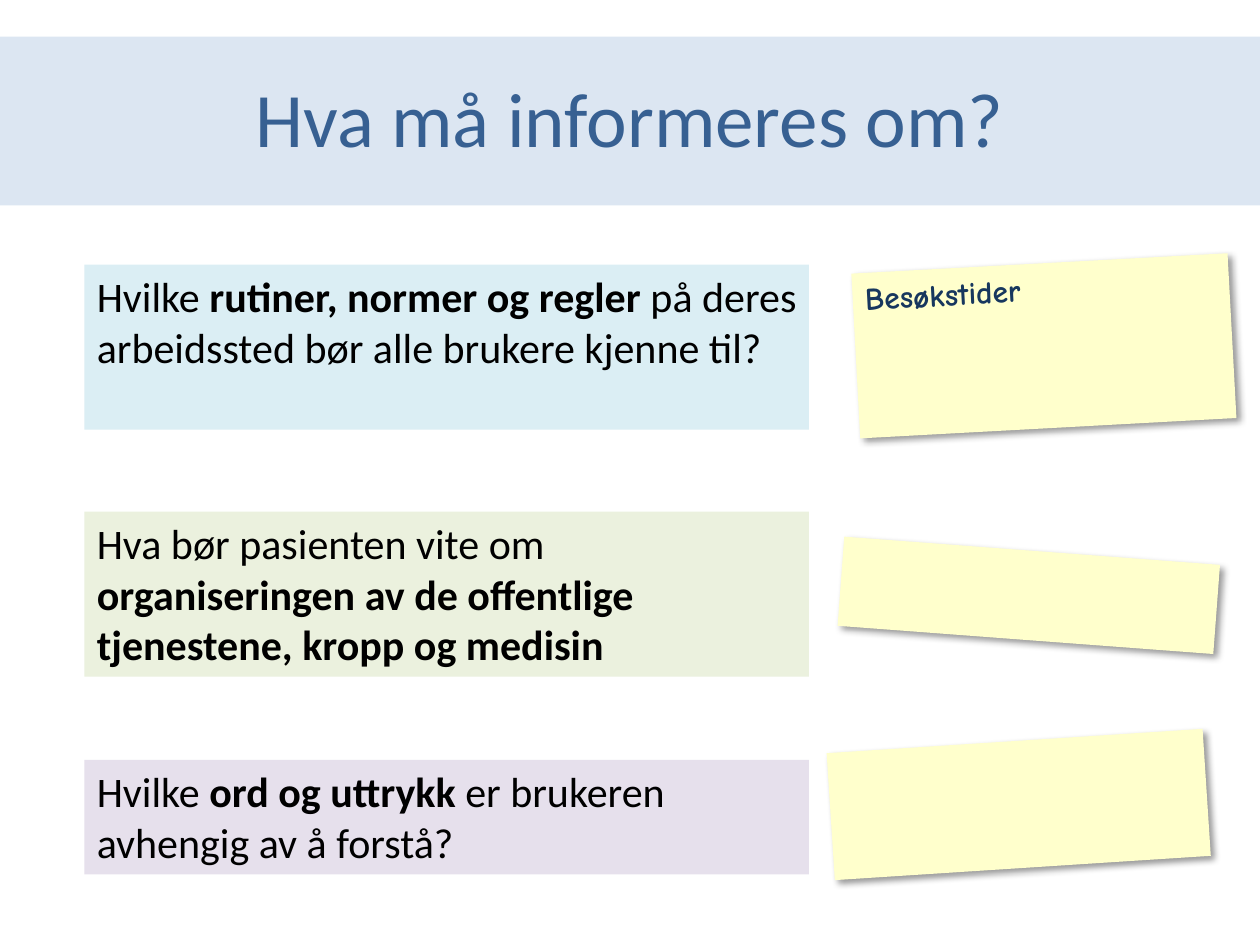
from lxml import etree
from pptx import Presentation
from pptx.dml.color import RGBColor
from pptx.enum.shapes import MSO_SHAPE
from pptx.enum.text import MSO_ANCHOR, PP_ALIGN
from pptx.oxml.ns import qn
from pptx.util import Inches, Pt

BAND_BLUE = RGBColor(0xDC, 0xE6, 0xF2)
TITLE_BLUE = RGBColor(0x37, 0x60, 0x92)
AQUA = RGBColor(0xDB, 0xEE, 0xF4)
GREEN = RGBColor(0xEB, 0xF1, 0xDE)
PURPLE = RGBColor(0xE6, 0xE0, 0xEC)
NOTE_YELLOW = RGBColor(0xFF, 0xFF, 0xCC)
NOTE_BLUE = RGBColor(0x17, 0x37, 0x5E)
BLACK = RGBColor(0, 0, 0)

QUESTIONS = [
    (2.1, 1.31, AQUA, [
        ("Hvilke ", False),
        ("rutiner, normer og regler ", True),
        ("på deres arbeidssted bør alle brukere kjenne til?", False)]),
    (4.06, 1.31, GREEN, [
        ("Hva bør pasienten vite om ", False),
        ("organiseringen av de offentlige tjenestene, kropp og medisin", True)]),
    (6.03, 0.91, PURPLE, [
        ("Hvilke ", False),
        ("ord og uttrykk ", True),
        ("er brukeren avhengig av å forstå?", False)]),
]
NOTES = [
    (6.79, 2.09, 1.31, 356.9, "Besøkstider"),
    (6.59, 5.88, 1.01, 356.3, ""),
    (6.67, 4.37, 0.71, 4.3, ""),
]


def add_box(slide, left, top, width, height, fill):
    shape = slide.shapes.add_shape(
        MSO_SHAPE.RECTANGLE, Inches(left), Inches(top), Inches(width), Inches(height))
    shape.shadow.inherit = False
    shape.fill.solid()
    shape.fill.fore_color.rgb = fill
    shape.line.fill.background()
    shape.text_frame.word_wrap = True
    shape.text_frame.vertical_anchor = MSO_ANCHOR.TOP
    shape.text_frame.paragraphs[0].alignment = PP_ALIGN.LEFT
    return shape


def format_run(run, size, color, name="Calibri", bold=False):
    run.font.size = Pt(size)
    run.font.color.rgb = color
    run.font.name = name
    run.font.bold = bold


def add_drop_shadow(shape):
    effects = shape._element.spPr.find(qn("a:effectLst"))
    shadow = etree.SubElement(
        effects, qn("a:outerShdw"), blurRad=str(Pt(4)), dist=str(Pt(3)),
        dir=str(45 * 60000), algn="tl", rotWithShape="0")
    color = etree.SubElement(shadow, qn("a:srgbClr"), val=str(BLACK))
    etree.SubElement(color, qn("a:alpha"), val="40000")


def add_title(slide, left, top, width, height):
    add_box(slide, left, top, width, height, BAND_BLUE)
    margin = 0.5
    title = slide.shapes.add_textbox(
        Inches(left + margin), Inches(top + 0.01),
        Inches(width - 2 * margin), Inches(1.25))
    frame = title.text_frame
    frame.word_wrap = True
    frame.vertical_anchor = MSO_ANCHOR.MIDDLE
    paragraph = frame.paragraphs[0]
    paragraph.text = "Hva må informeres om?"
    paragraph.alignment = PP_ALIGN.CENTER
    format_run(paragraph.runs[0], 44, TITLE_BLUE)


def add_question(slide, left, top, width, height, fill, parts):
    shape = add_box(slide, left, top, width, height, fill)
    paragraph = shape.text_frame.paragraphs[0]
    for text, bold in parts:
        run = paragraph.add_run()
        run.text = text
        format_run(run, 24, BLACK, bold=bold)


def add_note(slide, left, top, width, height, rotation, text):
    shape = add_box(slide, left, top, width, height, NOTE_YELLOW)
    shape.rotation = rotation
    add_drop_shadow(shape)
    if text:
        paragraph = shape.text_frame.paragraphs[0]
        paragraph.text = text
        format_run(paragraph.runs[0], 18, NOTE_BLUE, "Comic Neue", True)


def main():
    presentation = Presentation()
    presentation.slide_width = Inches(10)
    presentation.slide_height = Inches(7.5)
    slide = presentation.slides.add_slide(presentation.slide_layouts[6])
    add_title(slide, 0, 0.29, 10, 1.34)
    for top, height, fill, parts in QUESTIONS:
        add_question(slide, 0.67, top, 5.75, height, fill, parts)
    for left, top, height, rotation, text in NOTES:
        add_note(slide, left, top, 2.99, height, rotation, text)
    presentation.save("out.pptx")


if __name__ == "__main__":
    main()
